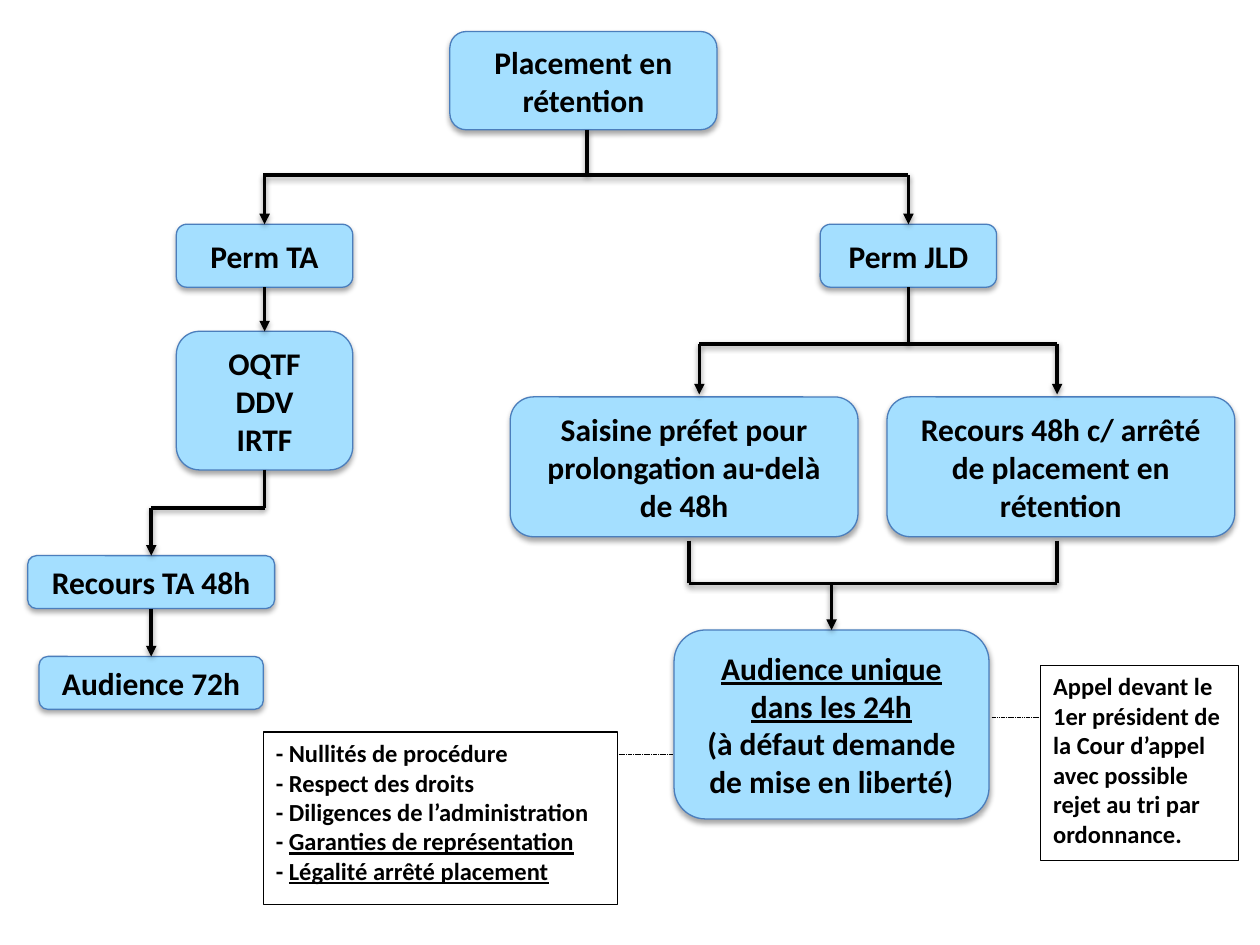
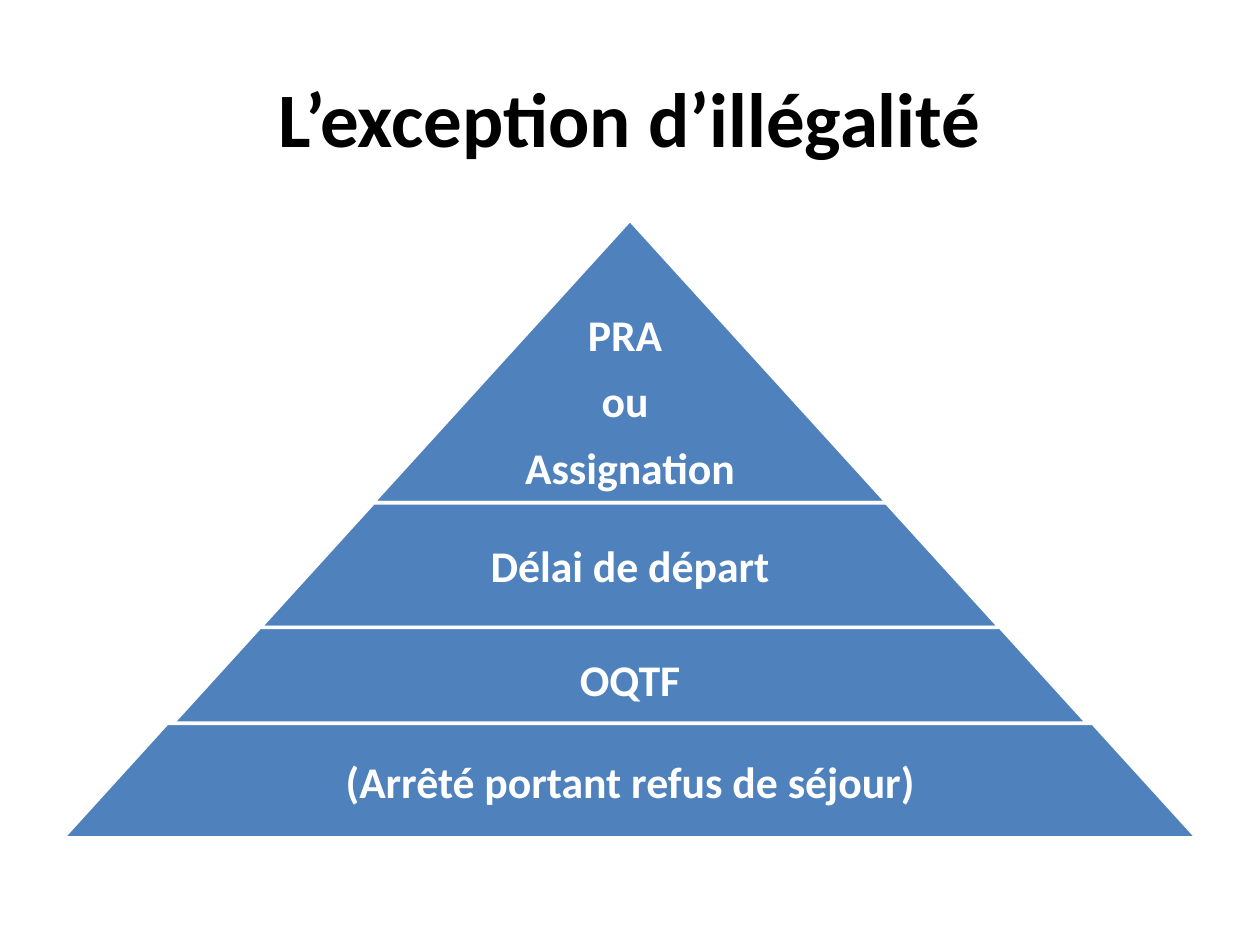
from typing import NamedTuple, Optional

from lxml.etree import SubElement
from pptx import Presentation
from pptx.dml.color import RGBColor
from pptx.enum.dml import MSO_LINE
from pptx.enum.shapes import MSO_CONNECTOR, MSO_SHAPE
from pptx.enum.text import MSO_ANCHOR as Anchor, PP_ALIGN as Align
from pptx.oxml.ns import qn
from pptx.util import Emu, Pt

PX = 9144
FONT = "Calibri"
BLACK = RGBColor(0x00, 0x00, 0x00)
WHITE = RGBColor(0xFF, 0xFF, 0xFF)
SKY = RGBColor(0xA4, 0xDF, 0xFF)
EDGE = RGBColor(0x4B, 0x7E, 0xBC)
STEEL = RGBColor(0x4F, 0x81, 0xBD)

TOP, LEFT, BOTTOM, RIGHT = range(4)
CENTER_X = 500
PYRAMID_SLOPE = 0.909
TEXT_SHARE = 0.65


class Span(NamedTuple):
    text: str
    underline: bool = False


Lines = tuple[tuple[Span, ...], ...]


class Step(NamedTuple):
    name: str
    x: int
    y: int
    w: int
    h: int
    lines: Lines


class Note(NamedTuple):
    x: int
    y: int
    w: int
    h: int
    lines: Lines


class Link(NamedTuple):
    x1: int
    y1: int
    x2: int
    y2: int
    arrow: bool = False
    start: Optional[str] = None
    end: Optional[str] = None


class Tier(NamedTuple):
    y: int
    w: int
    h: int
    lines: Lines
    text_share: float = TEXT_SHARE
    top_inset: int = 3


def plain(*texts: str) -> Lines:
    return tuple((Span(text),) for text in texts)


STEPS = (
    Step("placement", 357, 25, 212, 78, plain("Placement en rétention")),
    Step("perm_ta", 140, 178, 140, 50, plain("Perm TA")),
    Step("perm_jld", 651, 178, 140, 50, plain("Perm JLD")),
    Step("decisions", 140, 263, 140, 110, plain("OQTF", "DDV", "IRTF")),
    Step("recours_ta", 22, 441, 196, 42, plain("Recours TA 48h")),
    Step("audience_ta", 31, 521, 178, 42, plain("Audience 72h")),
    Step("saisine", 405, 315, 276, 111,
         plain("Saisine préfet pour prolongation au-delà de 48h")),
    Step("recours_jld", 704, 315, 276, 111,
         plain("Recours 48h c/ arrêté de placement en rétention")),
    Step("audience_jld", 535, 500, 250, 150, (
        (Span("Audience unique", True),),
        (Span("dans les 24h", True),),
        (Span("(à défaut demande de mise en liberté)"),),
    )),
)

LINKS = (
    Link(466, 103, 466, 139),
    Link(209, 139, 721, 139),
    Link(210, 139, 210, 178, True, end="perm_ta"),
    Link(721, 139, 721, 178, True, end="perm_jld"),
    Link(210, 228, 210, 263, True, "perm_ta", "decisions"),
    Link(210, 373, 210, 403, start="decisions"),
    Link(120, 403, 210, 403),
    Link(120, 403, 120, 441, True, end="recours_ta"),
    Link(120, 483, 120, 521, True, "recours_ta", "audience_ta"),
    Link(721, 228, 721, 273, start="perm_jld"),
    Link(555, 273, 839, 273),
    Link(555, 273, 555, 313, True),
    Link(839, 273, 839, 313, True),
    Link(547, 429, 547, 463),
    Link(839, 429, 839, 463),
    Link(547, 463, 839, 463),
    Link(660, 463, 660, 500, True, end="audience_jld"),
)

NOTE_LINKS = (Link(787, 569, 826, 569), Link(491, 599, 534, 599))

NOTES = (
    Note(826, 528, 157, 155, plain(
        "Appel devant le 1er président de la Cour d’appel "
        "avec possible rejet au tri par ordonnance.")),
    Note(209, 581, 281, 137, plain(
        "- Nullités de procédure",
        "- Respect des droits",
        "- Diligences de l’administration",
    ) + (
        (Span("- "), Span("Garanties de représentation", True)),
        (Span("- "), Span("Légalité arrêté placement", True)),
    )),
)

TIERS = (
    Tier(175, 408, 224, plain("PRA ", "ou ", "Assignation"), 1, 64),
    Tier(399, 587, 99, plain("Délai de départ")),
    Tier(498, 735, 81, plain("OQTF")),
    Tier(574, 900, 91, plain("(Arrêté portant refus de séjour)")),
)


def px(*values: float) -> list[Emu]:
    return [Emu(round(value * PX)) for value in values]


def write(tf, lines: Lines, size: int, color: RGBColor = BLACK,
          align: Align = Align.CENTER, gap: int = 0) -> None:
    tf.word_wrap = True
    for i, spans in enumerate(lines):
        p = tf.add_paragraph() if i else tf.paragraphs[0]
        p.alignment = align
        if i and gap:
            p.space_before = Pt(gap)
        for span in spans:
            r = p.add_run()
            r.text = span.text
            r.font.name = FONT
            r.font.size = Pt(size)
            r.font.bold = True
            r.font.color.rgb = color
            if span.underline:
                r.font.underline = True


def outline(shape, color: RGBColor, width: float) -> None:
    shape.line.color.rgb = color
    shape.line.width = Pt(width)


def set_effects(shape, alpha: int = 0, distance: int = 0) -> None:
    effects = SubElement(shape._element.spPr, qn("a:effectLst"))
    if alpha:
        shadow = SubElement(effects, qn("a:outerShdw"), blurRad="40000",
                            dist=str(distance), dir="5400000", rotWithShape="0")
        color = SubElement(shadow, qn("a:srgbClr"), val=str(BLACK))
        SubElement(color, qn("a:alpha"), val=str(alpha * 1000))


def add_step(s, step: Step):
    sp = s.shapes.add_shape(MSO_SHAPE.ROUNDED_RECTANGLE,
                            *px(step.x, step.y, step.w, step.h))
    sp.fill.solid()
    sp.fill.fore_color.rgb = SKY
    outline(sp, EDGE, 0.75)
    set_effects(sp, 35, 23000)
    sp.text_frame.vertical_anchor = Anchor.MIDDLE
    write(sp.text_frame, step.lines, 18)
    return sp


def add_line(s, link: Link, width: float):
    line = s.shapes.add_connector(MSO_CONNECTOR.STRAIGHT,
                                  *px(link.x1, link.y1, link.x2, link.y2))
    outline(line, BLACK, width)
    return line


def add_link(s, link: Link, boxes: dict) -> None:
    line = add_line(s, link, 2)
    if link.arrow:
        SubElement(line.line._get_or_add_ln(), qn("a:tailEnd"), type="triangle")
    set_effects(line, 38, 20000)
    if link.start:
        line.begin_connect(boxes[link.start], BOTTOM)
    if link.end:
        line.end_connect(boxes[link.end], TOP)


def add_note_link(s, link: Link) -> None:
    line = add_line(s, link, 0.25)
    line.line.dash_style = MSO_LINE.SQUARE_DOT
    set_effects(line)


def add_note(s, note: Note) -> None:
    sp = s.shapes.add_shape(MSO_SHAPE.RECTANGLE,
                            *px(note.x, note.y, note.w, note.h))
    sp.shadow.inherit = False
    sp.fill.background()
    outline(sp, BLACK, 0.75)
    sp.text_frame.vertical_anchor = Anchor.TOP
    write(sp.text_frame, note.lines, 14, align=Align.LEFT)


def add_tier(s, tier: Tier) -> None:
    sp = s.shapes.add_shape(MSO_SHAPE.TRAPEZOID,
                            *px(CENTER_X - tier.w / 2, tier.y, tier.w, tier.h))
    sp.adjustments[0] = PYRAMID_SLOPE
    sp.shadow.inherit = False
    sp.fill.solid()
    sp.fill.fore_color.rgb = STEEL
    outline(sp, WHITE, 2)

    w = tier.w * tier.text_share
    label = s.shapes.add_textbox(*px(CENTER_X - w / 2, tier.y, w, tier.h))
    tf = label.text_frame
    tf.vertical_anchor = Anchor.MIDDLE
    tf.margin_left, tf.margin_top, tf.margin_right, tf.margin_bottom = px(
        3, tier.top_inset, 3, 3)
    write(tf, tier.lines, 25, WHITE, gap=8)


def build_procedure(prs) -> None:
    s = prs.slides.add_slide(prs.slide_layouts[6])
    for link in NOTE_LINKS:
        add_note_link(s, link)
    boxes = {step.name: add_step(s, step) for step in STEPS}
    for link in LINKS:
        add_link(s, link, boxes)
    for note in NOTES:
        add_note(s, note)


def build_pyramid(prs) -> None:
    s = prs.slides.add_slide(prs.slide_layouts[5])
    title = s.shapes.title
    title.left, title.top, title.width, title.height = px(50, 30, 900, 125)
    title.text_frame.vertical_anchor = Anchor.MIDDLE
    write(title.text_frame, plain("L’exception d’illégalité"), 44)
    for tier in TIERS:
        add_tier(s, tier)


def main() -> None:
    prs = Presentation()
    prs.slide_width, prs.slide_height = px(1000, 750)
    build_procedure(prs)
    build_pyramid(prs)
    prs.save("out.pptx")


if __name__ == "__main__":
    main()
